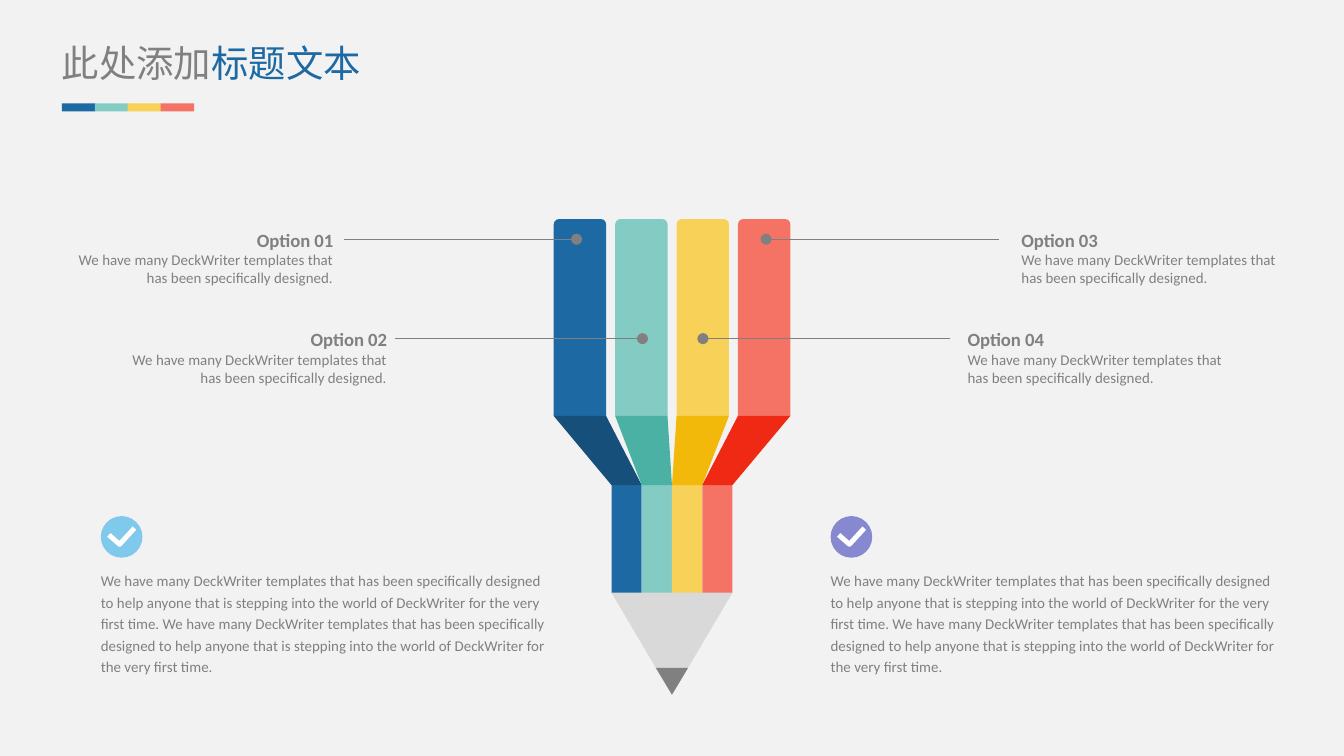
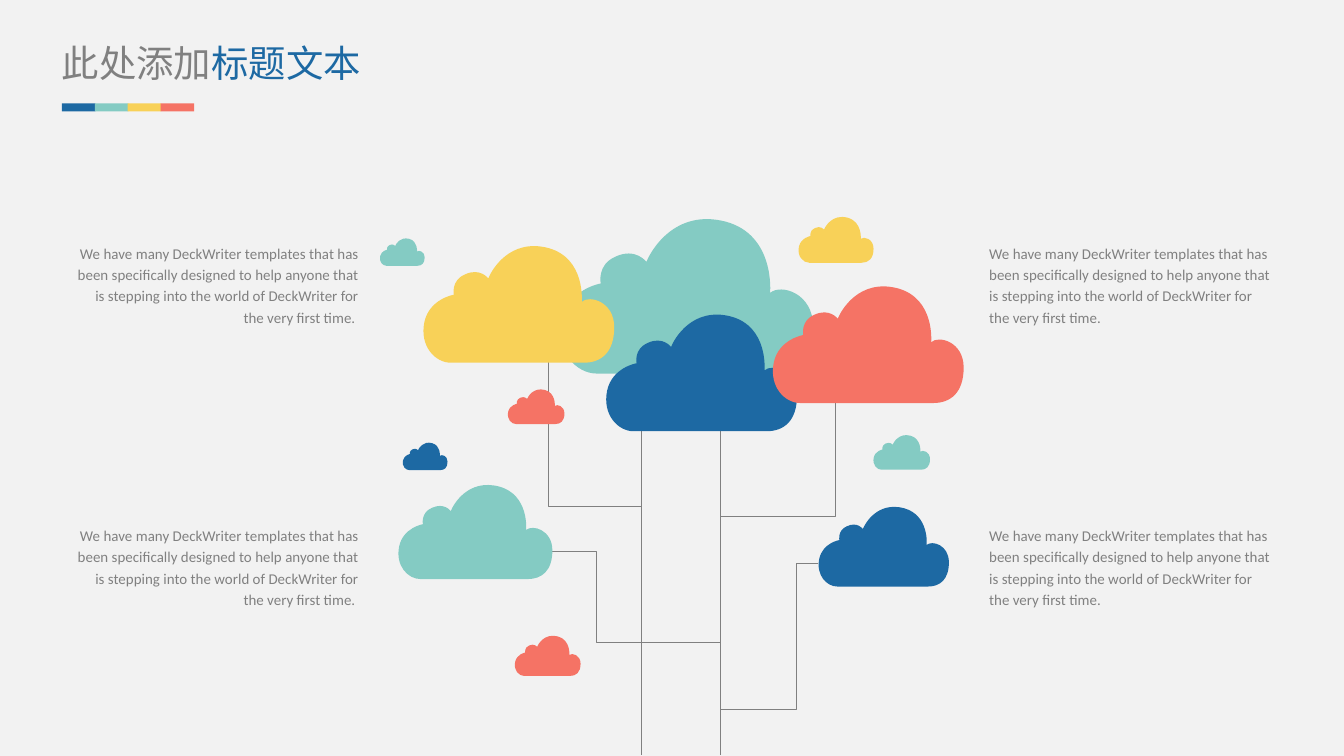
from lxml.etree import SubElement
from pptx import Presentation
from pptx.dml.color import RGBColor
from pptx.enum.shapes import MSO_CONNECTOR, MSO_SHAPE
from pptx.enum.text import MSO_ANCHOR, MSO_AUTO_SIZE, PP_ALIGN
from pptx.oxml.ns import qn
from pptx.util import Inches, Pt

BLUE, TEAL, YELLOW, CORAL = PALETTE = ("1D69A3", "84CBC3", "F8D158", "F57365")
FOLDS = ("164F7A", "4BB1A5", "F2B90A", "F02914")
GREY, WOOD, PAPER, WHITE = "808080", "D9D9D9", "F2F2F2", "FFFFFF"
BODY_FONT, TITLE_FONT = "Calibri", "Noto Sans CJK SC"
LEFT, RIGHT = PP_ALIGN.LEFT, PP_ALIGN.RIGHT

OPENING = "We have many DeckWriter templates that has been specifically designed"
SENTENCE = (f"{OPENING} to help anyone that is stepping into the world of "
            "DeckWriter for the very first time.")

FRAME = {
    "margin_left": 0, "margin_right": 0, "margin_top": 0, "margin_bottom": 0,
    "word_wrap": True, "vertical_anchor": MSO_ANCHOR.TOP,
    "auto_size": MSO_AUTO_SIZE.SHAPE_TO_FIT_TEXT,
}

# Start point, then two control points and an end point for each curve.
CLOUD_WIDTH = 1.92
CLOUD = (
    (0.31, 1.23),
    (0.51, 1.23), (1.45, 1.23), (1.62, 1.23),
    (1.79, 1.23), (1.92, 1.13), (1.92, 0.88),
    (1.92, 0.63), (1.68, 0.56), (1.60, 0.63),
    (1.60, 0.63), (1.64, 0.20), (1.27, 0.10),
    (0.89, 0.00), (0.71, 0.32), (0.68, 0.40),
    (0.68, 0.40), (0.60, 0.29), (0.45, 0.36),
    (0.31, 0.42), (0.34, 0.56), (0.34, 0.56),
    (0.34, 0.56), (0.10, 0.60), (0.05, 0.83),
    (0.00, 1.07), (0.16, 1.23), (0.31, 1.23),
)


def color(hex_string):
    return RGBColor.from_string(hex_string)


def assign(target, values):
    for name, value in values.items():
        setattr(target, name, value)


def bend(shape):
    """Turn each three line segments of a freeform into one cubic curve."""
    segments = list(shape._element.iter(qn("a:lnTo")))
    for first in range(0, len(segments) - 2, 3):
        curve = segments[first].makeelement(qn("a:cubicBezTo"))
        segments[first].addprevious(curve)
        for segment in segments[first:first + 3]:
            curve.append(segment[0])
            segment.getparent().remove(segment)


class Deck:
    """Holds the shared style, the current slide and the shapes being added to."""

    def __init__(self):
        self.presentation = Presentation()
        assign(self.presentation,
               {"slide_width": Inches(10), "slide_height": Inches(5.625)})
        backdrop = self.presentation.slide_master.background.fill
        backdrop.solid()
        backdrop.fore_color.rgb = color(PAPER)

    def new_slide(self):
        """Add a slide with the shared two-colour title and colour strip."""
        layout = self.presentation.slide_layouts[5]
        self.slide = self.presentation.slides.add_slide(layout)
        title = self.slide.shapes.title
        self.place(title, 0.46, 0.3, 3.04, 0.34)
        assign(title.text_frame, FRAME)
        paragraph = title.text_frame.paragraphs[0]
        paragraph.alignment = LEFT
        self.run(paragraph, "此处添加", 20, GREY, TITLE_FONT)
        self.run(paragraph, "标题文本", 20, BLUE, TITLE_FONT)
        self.group()
        for index, tint in enumerate(PALETTE):
            self.preset(MSO_SHAPE.RECTANGLE, 0.46 + 0.245 * index, 0.77, 0.25, 0.06, tint)
        self.ungroup()

    def group(self):
        self.shapes = self.slide.shapes.add_group_shape().shapes

    def ungroup(self):
        self.shapes = self.slide.shapes

    def place(self, shape, *box):
        assign(shape, dict(zip(("left", "top", "width", "height"), map(Inches, box))))

    def run(self, paragraph, text, size, tint, font, bold=False):
        run = paragraph.add_run()
        run.text = text
        assign(run.font, {"size": Pt(size), "name": font, "bold": bold})
        run.font.color.rgb = color(tint)
        SubElement(run._r.get_or_add_rPr(), qn("a:ea")).set("typeface", font)

    def paint(self, shape, fill=None, line=None, weight=0.5):
        shape.shadow.inherit = False
        for part, tint in ((shape.fill, fill), (shape.line.fill, line)):
            if tint:
                part.solid()
                part.fore_color.rgb = color(tint)
            else:
                part.background()
        if line:
            shape.line.width = Pt(weight)

    def preset(self, kind, x, y, width, height, fill):
        shape = self.shapes.add_shape(kind, *map(Inches, (x, y, width, height)))
        self.paint(shape, fill)
        return shape

    def outline(self, points, fill=None, line=None, weight=0.5):
        """Draw a closed outline when filled, an open path otherwise."""
        start, *rest = [(Inches(x), Inches(y)) for x, y in points]
        builder = self.shapes.build_freeform(*start)
        builder.add_line_segments(rest, close=fill is not None)
        shape = builder.convert_to_shape()
        self.paint(shape, fill, line, weight)
        return shape

    def line(self, x1, y1, x2, y2, dot_end=None):
        """Draw a thin line; dot_end is 'headEnd' or 'tailEnd' for a round dot."""
        connector = self.shapes.add_connector(
            MSO_CONNECTOR.STRAIGHT, *map(Inches, (x1, y1, x2, y2)))
        connector.line.color.rgb = color(GREY)
        connector.line.width = Pt(0.5)
        properties = connector._element.spPr
        if dot_end:
            SubElement(properties.find(qn("a:ln")), qn(f"a:{dot_end}")).set("type", "oval")
        SubElement(properties, qn("a:effectLst"))

    def text(self, x, y, width, height, body, heading=None, align=LEFT, spacing=None):
        frame = self.shapes.add_textbox(*map(Inches, (x, y, width, height))).text_frame
        assign(frame, FRAME)
        paragraph = frame.paragraphs[0]
        if heading:
            paragraph.alignment = align
            self.run(paragraph, heading, 10, GREY, BODY_FONT, bold=True)
            paragraph = frame.add_paragraph()
        assign(paragraph, {"alignment": align, "line_spacing": spacing})
        self.run(paragraph, body, 8, GREY, BODY_FONT)

    def check_mark(self, x, y, fill):
        self.group()
        self.preset(MSO_SHAPE.OVAL, x, y, 0.31, 0.31, fill)
        tick = ((0.06, 0.14), (0.14, 0.21), (0.25, 0.09))
        self.outline([(x + dx, y + dy) for dx, dy in tick], line=WHITE, weight=2.63)
        self.ungroup()

    def cloud(self, x, y, width, fill):
        scale = width / CLOUD_WIDTH
        bend(self.outline([(x + dx * scale, y + dy * scale) for dx, dy in CLOUD], fill))


def draw_pencil(deck):
    bar_top, fold_top, barrel_top, wood_top, lead_top, tip = 1.63, 3.095, 3.61, 4.41, 4.97, 5.17
    bar_width, barrel_width, barrel_left, center = 0.39, 0.225, 4.55, 5
    barrel_right = barrel_left + 4 * barrel_width
    deck.group()
    for index, (tint, fold) in enumerate(zip(PALETTE, FOLDS)):
        bar = 4.12 + 0.457 * index
        left = barrel_left + barrel_width * index
        right = left + barrel_width
        top = deck.preset(MSO_SHAPE.ROUND_2_SAME_RECTANGLE, bar, bar_top,
                          bar_width, fold_top - bar_top, tint)
        top.adjustments[0] = 0.1
        deck.outline([(left, barrel_top), (right, barrel_top), (right, wood_top),
                      ((left + right) / 2, 4.52), (left, wood_top)], tint)
        deck.outline([(bar, fold_top), (bar + bar_width, fold_top),
                      (right, barrel_top), (left, barrel_top)], fold)
    deck.outline([(barrel_left, wood_top), (barrel_right, wood_top),
                  (center + 0.12, lead_top), (center - 0.12, lead_top)], WOOD)
    deck.outline([(center - 0.12, lead_top), (center + 0.12, lead_top), (center, tip)], GREY)
    deck.ungroup()


def pencil_slide(deck):
    deck.new_slide()
    draw_pencil(deck)
    options = (
        ("Option 01", 0.51, 1.7, RIGHT, 2.56, 4.29),
        ("Option 02", 0.91, 2.44, RIGHT, 2.94, 4.78),
        ("Option 03", 7.6, 1.7, LEFT, 5.7, 7.43),
        ("Option 04", 7.2, 2.44, LEFT, 5.23, 7.07),
    )
    for heading, x, y, align, line_start, line_end in options:
        deck.text(x, y, 1.97, 0.43, f"{OPENING}.", heading, align)
        dot_end = "tailEnd" if align == RIGHT else "headEnd"
        deck.line(line_start, y + 0.08, line_end, y + 0.08, dot_end)
    for x, tint in ((0.75, "7FC9EC"), (6.18, "8689D0")):
        deck.check_mark(x, 3.84, tint)
        deck.text(x, 4.23, 3.39, 0.81, f"{SENTENCE} {SENTENCE}", spacing=1.2)


def cloud_tree_slide(deck):
    deck.new_slide()
    trunk_left, trunk_right = 4.77, 5.36
    for x in (trunk_left, trunk_right):
        deck.line(x, 3.16, x, 5.62)
    branches = (
        ((4.08, 2.58), (4.08, 3.77), (trunk_left, 3.77)),
        ((trunk_right, 3.84), (6.22, 3.84), (6.22, 3)),
        ((6.09, 4.19), (5.93, 4.19), (5.93, 5.28), (trunk_right, 5.28)),
        ((trunk_right, 4.78), (4.44, 4.78), (4.44, 4.1), (4.11, 4.1)),
    )
    for branch in branches:
        deck.outline(branch, line=GREY)
    for x, align, body in ((7.36, LEFT, SENTENCE), (0.55, RIGHT, f"{SENTENCE} ")):
        for y in (1.79, 3.89):
            deck.text(x, y, 2.12, 0.65, body, align=align, spacing=1.2)
    clouds = (
        (4.13, 1.55, 1.92, TEAL),
        (3.12, 1.77, 1.45, YELLOW),
        (5.93, 1.59, 0.57, YELLOW),
        (2.82, 1.76, 0.34, TEAL),
        (2.99, 3.28, 0.34, BLUE),
        (6.49, 3.22, 0.43, TEAL),
        (2.94, 3.56, 1.17, TEAL),
        (6.07, 3.73, 0.99, BLUE),
        (3.82, 4.71, 0.5, CORAL),
        (3.77, 2.88, 0.43, CORAL),
        (4.48, 2.28, 1.45, BLUE),
        (5.72, 2.07, 1.45, CORAL),
    )
    for cloud in clouds:
        deck.cloud(*cloud)


def main():
    deck = Deck()
    pencil_slide(deck)
    cloud_tree_slide(deck)
    deck.presentation.save("out.pptx")


if __name__ == "__main__":
    main()
